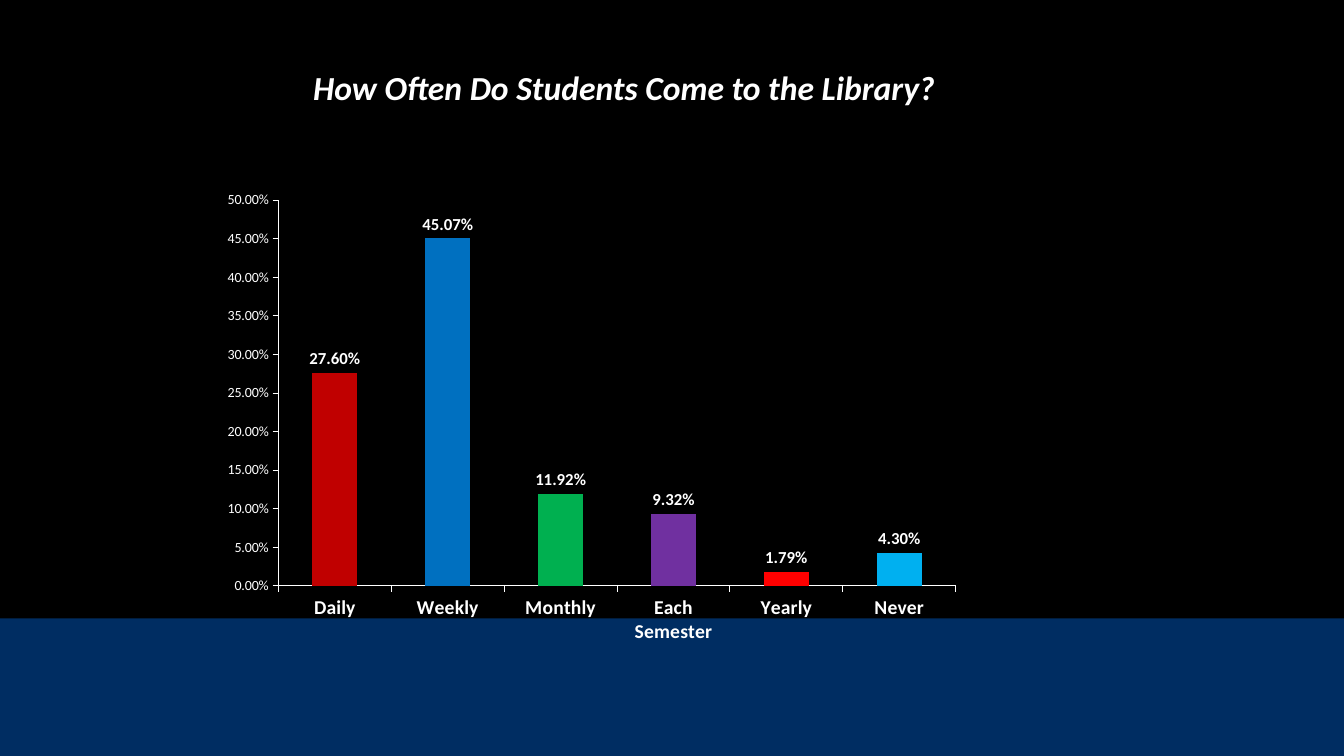
from dataclasses import dataclass

from lxml import etree
from pptx import Presentation
from pptx.chart.data import CategoryChartData
from pptx.dml.color import RGBColor
from pptx.enum.chart import XL_CHART_TYPE as ChartType
from pptx.enum.chart import XL_LABEL_POSITION as LabelPos
from pptx.enum.chart import XL_TICK_MARK as Tick
from pptx.enum.shapes import MSO_SHAPE as Shape
from pptx.enum.text import MSO_ANCHOR as Anchor
from pptx.enum.text import MSO_AUTO_SIZE as AutoSize
from pptx.enum.text import PP_ALIGN as Align
from pptx.oxml.ns import qn
from pptx.util import Inches, Pt


@dataclass(frozen=True)
class Theme:
    """Colours, font and type sizes of the slide."""

    font: str = "Calibri"
    back: str = "000000"
    ink: str = "FFFFFF"
    band: str = "002D62"
    title: int = 24
    category: int = 14
    label: int = 12
    tick: int = 10


VISITS = [
    ("Daily", 0.276, "C00000"),
    ("Weekly", 0.4507, "0070C0"),
    ("Monthly", 0.1192, "00B050"),
    ("Each Semester", 0.0932, "7030A0"),
    ("Yearly", 0.0179, "FF0000"),
    ("Never", 0.043, "00B0F0"),
]
PERCENT = "0.00%"
COLS, ROWS = 160, 90


class Deck:
    """Draws elements on a slide divided into 160 columns and 90 rows."""

    def __init__(self, prs, theme):
        """Add a title-only slide with a plain background."""
        self.prs, self.theme = prs, theme
        self.slide = prs.slides.add_slide(prs.slide_layouts[5])
        self.paint(self.slide.background.fill, theme.back)

    def paint(self, fill, color):
        """Make a fill solid in one colour."""
        fill.solid()
        fill.fore_color.rgb = RGBColor.from_string(color)

    def style(self, font, size, bold=False, italic=False):
        """Apply the theme's font and ink."""
        font.name, font.size = self.theme.font, Pt(size)
        font.bold, font.italic = bold, italic
        font.color.rgb = RGBColor.from_string(self.theme.ink)

    def box(self, col, row, cols, rows):
        """Turn grid cells into left, top, width and height."""
        dx, dy = self.prs.slide_width / COLS, self.prs.slide_height / ROWS
        return [int(v) for v in (col * dx, row * dy, cols * dx, rows * dy)]

    def band(self, *cells):
        """Draw a plain rectangle in the band colour."""
        sp = self.slide.shapes.add_shape(Shape.RECTANGLE, *self.box(*cells))
        sp.shadow.inherit = False
        sp.line.fill.background()
        self.paint(sp.fill, self.theme.band)

    def title(self, text, *cells):
        """Place and format the title placeholder."""
        sp = self.slide.shapes.title
        sp.left, sp.top, sp.width, sp.height = self.box(*cells)
        tf = sp.text_frame
        tf.text = text
        tf.word_wrap, tf.auto_size = True, AutoSize.NONE
        tf.vertical_anchor = Anchor.TOP
        p = tf.paragraphs[0]
        p.alignment, p.line_spacing = Align.CENTER, 0.9
        self.style(p.runs[0].font, self.theme.title, bold=True, italic=True)

    def column_chart(self, visits, plot_share, *cells):
        """Add a column chart with one colour per category."""
        data = CategoryChartData(number_format=PERCENT)
        data.categories = [name for name, _, _ in visits]
        data.add_series("Series 1", [value for _, value, _ in visits])
        frame = self.slide.shapes.add_chart(
            ChartType.COLUMN_CLUSTERED, *self.box(*cells), data)
        chart = frame.chart
        chart.has_legend = chart.has_title = False
        self.style(chart.font, self.theme.tick)
        self.axis(chart.category_axis, self.theme.category, True)
        value_axis = chart.value_axis
        self.axis(value_axis, self.theme.tick, False)
        value_axis.minimum_scale, value_axis.maximum_scale = 0, 0.5
        value_axis.major_unit = 0.05
        value_axis.tick_labels.number_format = PERCENT
        value_axis.tick_labels.number_format_is_linked = False
        plot = chart.plots[0]
        plot.gap_width, plot.vary_by_categories = 150, False
        series = plot.series[0]
        series.invert_if_negative = False
        for i, (_, _, color) in enumerate(visits):
            self.paint(series.points[i].format.fill, color)
        labels = series.data_labels
        labels.show_value, labels.position = True, LabelPos.OUTSIDE_END
        labels.number_format = PERCENT
        labels.number_format_is_linked = False
        self.style(labels.font, self.theme.label, bold=True)
        self.fix_plot(chart, plot_share)

    def axis(self, axis, size, bold):
        """Draw an axis in ink with outer ticks and no grid."""
        axis.has_major_gridlines = False
        axis.major_tick_mark, axis.minor_tick_mark = Tick.OUTSIDE, Tick.NONE
        axis.format.line.width = Pt(0.75)
        self.paint(axis.format.line.fill, self.theme.ink)
        self.style(axis.tick_labels.font, size, bold)

    def fix_plot(self, chart, share):
        """Set the inner plot area as shares of the chart's size."""
        area = chart.element.find(f".//{qn('c:plotArea')}")
        for old in area.findall(qn("c:layout")):
            area.remove(old)
        layout = etree.Element(qn("c:layout"))
        manual = etree.SubElement(layout, qn("c:manualLayout"))
        settings = [("layoutTarget", "inner"), ("xMode", "edge"),
                    ("yMode", "edge"), *zip("xywh", share)]
        for tag, value in settings:
            etree.SubElement(manual, qn(f"c:{tag}"), val=str(value))
        area.insert(0, layout)


def main():
    """Build and save the slide."""
    prs = Presentation()
    prs.slide_width, prs.slide_height = Inches(13.33), Inches(7.5)
    deck = Deck(prs, Theme())
    deck.band(0, 73.6, COLS, ROWS - 73.6)
    deck.title("How Often Do Students Come to the Library?", 22.4, 7.9, 103.8, 6)
    deck.column_chart(VISITS, (0.09, 0.04, 0.89, 0.82), 25, 21.6, 90.6, 56)
    prs.save("out.pptx")


if __name__ == "__main__":
    main()
